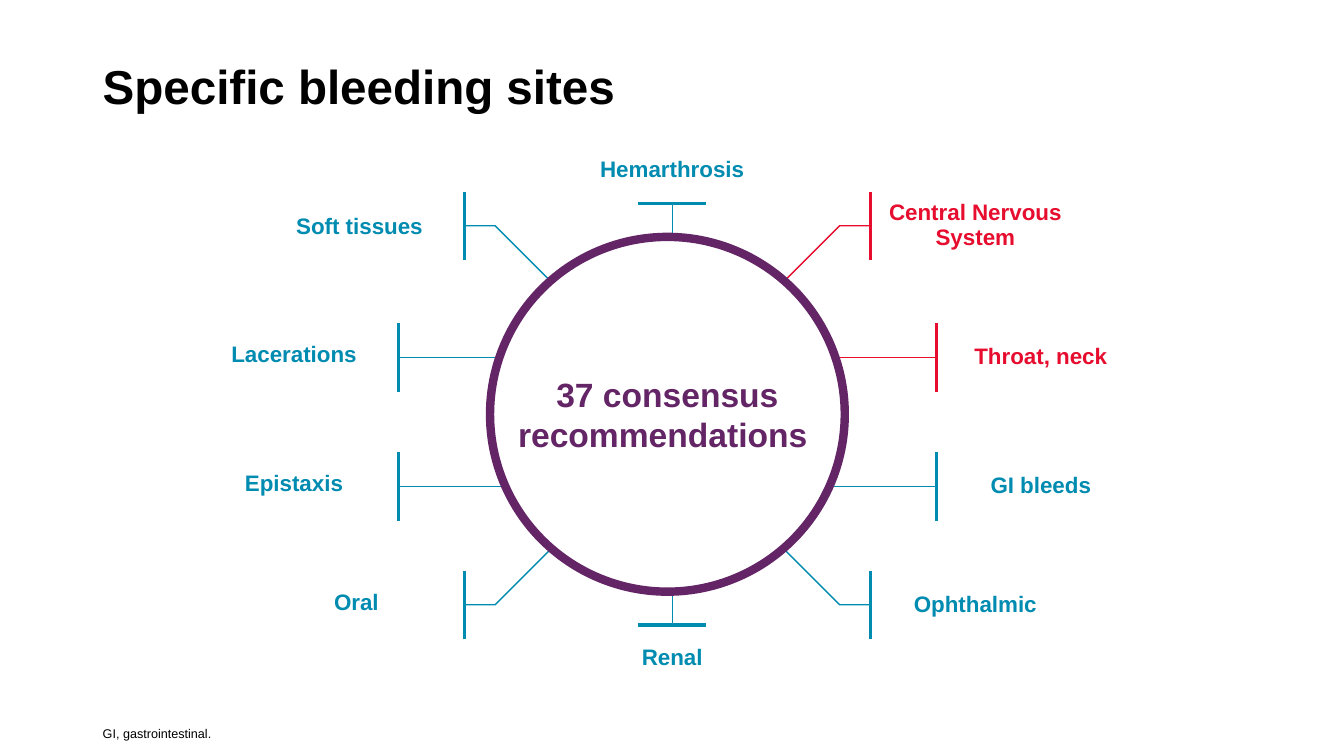
from dataclasses import dataclass

from lxml.etree import SubElement
from pptx import Presentation
from pptx.dml.color import RGBColor
from pptx.enum.shapes import MSO_CONNECTOR, MSO_SHAPE
from pptx.enum.text import MSO_ANCHOR, PP_ALIGN
from pptx.oxml.ns import qn
from pptx.util import Cm, Pt


@dataclass(frozen=True)
class Theme:
    """Colours, type sizes and line widths of the slide."""
    font: str = "Arial"
    black: str = "000000"
    white: str = "FFFFFF"
    teal: str = "008BB0"
    red: str = "E60D2E"
    purple: str = "642566"
    title: float = 34
    hub: float = 24
    label: float = 16
    note: float = 9
    thin: float = 1
    bar: float = 2.25
    ring: float = 6


@dataclass(frozen=True)
class Box:
    """A region in centimetres."""
    left: float
    top: float
    width: float
    height: float

    @property
    def centre(self):
        """Return the middle point."""
        return self.left + self.width / 2, self.top + self.height / 2

    @property
    def lengths(self):
        """Return left, top, width and height as slide lengths."""
        return Cm(self.left), Cm(self.top), Cm(self.width), Cm(self.height)


THEME = Theme()
LABEL_W, LABEL_H = 5.28, 1.7
BAR_HALF = 0.86
RING_SIZE = 8.94
ARM, DIAGONAL, STRAIGHT, STEM = 0.78, 1.45, 2.62, 2
NEAR, FAR = 5.12, 6.77
LEFT, RIGHT = -1, 1
ABOVE, BELOW = -1, 1
SIDE_SITES = [
    ("Soft tissues", LEFT, NEAR, -4.75, 0.04, THEME.teal),
    ("Lacerations", LEFT, FAR, -1.43, -0.05, THEME.teal),
    ("Epistaxis", LEFT, FAR, 1.82, -0.05, THEME.teal),
    ("Oral ", LEFT, NEAR, 4.8, -0.03, THEME.teal),
    ("Central Nervous System", RIGHT, NEAR, -4.75, 0, THEME.red),
    ("Throat, neck", RIGHT, FAR, -1.43, 0, THEME.red),
    ("GI bleeds", RIGHT, FAR, 1.82, 0, THEME.teal),
    ("Ophthalmic", RIGHT, NEAR, 4.8, 0, THEME.teal),
]
POLE_SITES = [("Hemarthrosis", ABOVE), ("Renal", BELOW)]


def write(s, box, text, size, color, bold=True, align=PP_ALIGN.CENTER,
          anchor=MSO_ANCHOR.MIDDLE, pad=0.13, spacing=None):
    """Place one paragraph of text in a box."""
    sp = s.shapes.add_textbox(*box.lengths)
    tf = sp.text_frame
    tf.word_wrap = True
    tf.vertical_anchor = anchor
    tf.margin_left = tf.margin_right = Cm(0.25)
    tf.margin_top = tf.margin_bottom = Cm(pad)
    p = tf.paragraphs[0]
    p.alignment = align
    if spacing:
        p.line_spacing = spacing
    r = p.add_run()
    r.text = text
    r.font.name = THEME.font
    r.font.size = Pt(size)
    r.font.bold = bold
    r.font.color.rgb = RGBColor.from_string(color)
    return sp


def label(s, left, top, text, color):
    """Write the name of a bleeding site on white."""
    sp = write(s, Box(left, top, LABEL_W, LABEL_H), text, THEME.label, color,
               pad=0.25, spacing=0.9)
    sp.fill.solid()
    sp.fill.fore_color.rgb = RGBColor.from_string(THEME.white)


def line(s, start, end, color, width):
    """Draw a straight line between two points."""
    cx = s.shapes.add_connector(MSO_CONNECTOR.STRAIGHT,
                                *(Cm(v) for v in (*start, *end)))
    cx.line.color.rgb = RGBColor.from_string(color)
    cx.line.width = Pt(width)
    SubElement(cx._element.spPr, qn("a:effectLst"))


def bent_line(s, points, color):
    """Draw an open outline through the points."""
    start, *rest = [(Cm(x), Cm(y)) for x, y in points]
    fb = s.shapes.build_freeform(*start)
    fb.add_line_segments(rest, close=False)
    sp = fb.convert_to_shape()
    sp.shadow.inherit = False
    sp.fill.background()
    sp.line.color.rgb = RGBColor.from_string(color)
    sp.line.width = Pt(THEME.thin)


def side_site(s, centre, text, side, reach, dy, nudge, color):
    """Draw a site to the left or right of the ring."""
    x, y = centre[0] + side * reach, centre[1] + dy
    if reach == NEAR:
        elbow = x - side * ARM
        inward = DIAGONAL if dy < 0 else -DIAGONAL
        bent_line(s, [(x, y), (elbow, y),
                      (elbow - side * DIAGONAL, y + inward)], color)
    else:
        line(s, (x, y), (x - side * STRAIGHT, y), color, THEME.thin)
    left = x if side == RIGHT else x - LABEL_W
    label(s, left, y - LABEL_H / 2 + nudge, text, color)
    line(s, (x, y - BAR_HALF), (x, y + BAR_HALF), color, THEME.bar)


def pole_site(s, box, text, side):
    """Draw a site above or below the ring."""
    x = box.centre[0] + 0.12
    top = box.top if side == ABOVE else box.top + box.height - LABEL_H
    y = top + LABEL_H if side == ABOVE else top
    line(s, (x, y), (x, y - side * STEM), THEME.teal, THEME.thin)
    label(s, x - LABEL_W / 2, top, text, THEME.teal)
    line(s, (x - BAR_HALF, y), (x + BAR_HALF, y), THEME.teal, THEME.bar)


def hub(s, centre):
    """Draw the ring and the message inside it."""
    x, y = centre
    ring = Box(x - RING_SIZE / 2, y - RING_SIZE / 2, RING_SIZE, RING_SIZE)
    sp = s.shapes.add_shape(MSO_SHAPE.OVAL, *ring.lengths)
    sp.shadow.inherit = False
    sp.fill.solid()
    sp.fill.fore_color.rgb = RGBColor.from_string(THEME.white)
    sp.line.color.rgb = RGBColor.from_string(THEME.purple)
    sp.line.width = Pt(THEME.ring)
    write(s, Box(x - 4.86, y - 1.15, 9.72, 2.3),
          "37 consensus recommendations ", THEME.hub, THEME.purple)


def diagram(s, box):
    """Draw the sites around the ring."""
    for site in SIDE_SITES:
        side_site(s, box.centre, *site)
    for site in POLE_SITES:
        pole_site(s, box, *site)
    hub(s, box.centre)


def heading(s, box):
    """Write the slide title."""
    write(s, box, "Specific bleeding sites", THEME.title, THEME.black,
          align=PP_ALIGN.LEFT)


def footnote(s, box):
    """Write the abbreviation note."""
    write(s, box, "GI, gastrointestinal.", THEME.note, THEME.black,
          bold=False, align=PP_ALIGN.LEFT, anchor=MSO_ANCHOR.BOTTOM, pad=0)


def main():
    """Build and save the slide."""
    prs = Presentation()
    prs.slide_width, prs.slide_height = Cm(33.87), Cm(19.05)
    s = prs.slides.add_slide(prs.slide_layouts[6])
    heading(s, Box(2.34, 0.64, 29.2, 3.02))
    diagram(s, Box(4.77, 3.43, 24.1, 14.02))
    footnote(s, Box(2.34, 17.65, 27.56, 1.02))
    prs.save("out.pptx")


if __name__ == "__main__":
    main()
